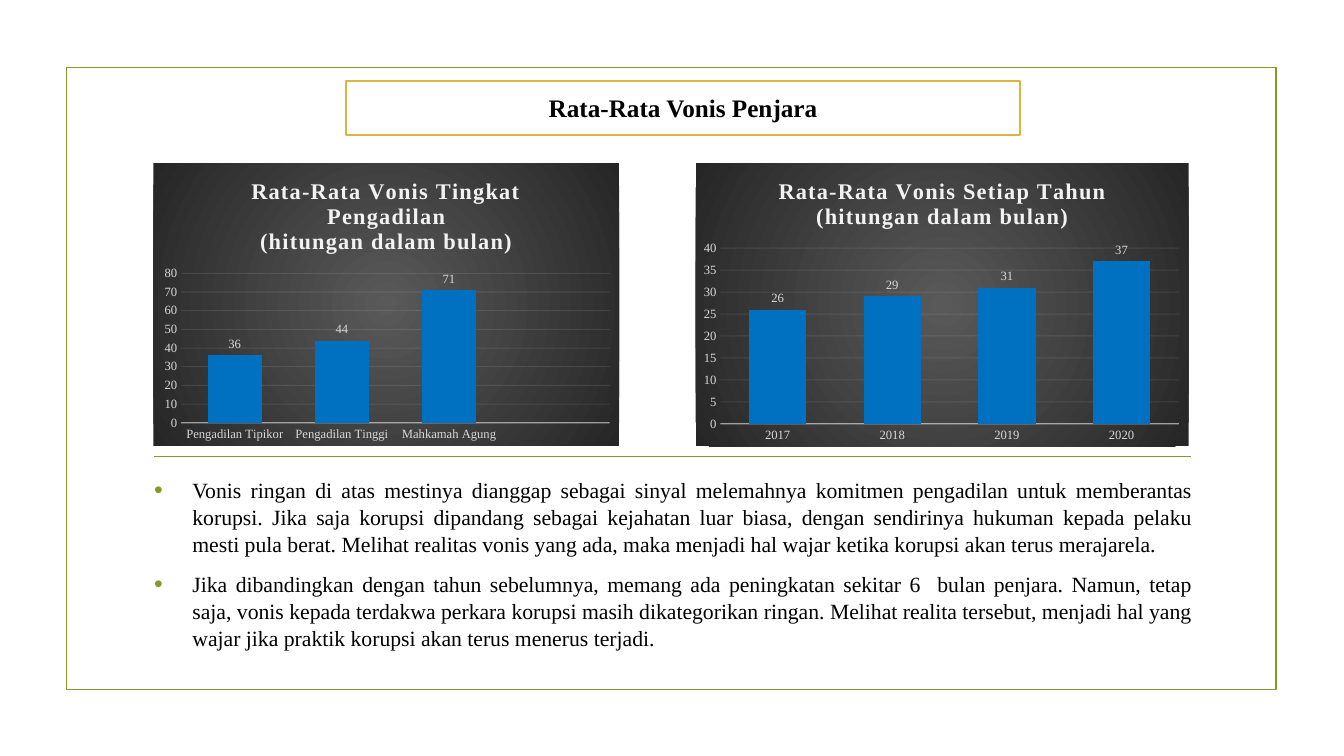
from dataclasses import dataclass

from lxml.etree import SubElement, _Element as Node
from pptx import Presentation
from pptx.chart.axis import _BaseAxis as Axis
from pptx.chart.chart import Chart
from pptx.chart.data import CategoryChartData as Data
from pptx.dml.color import RGBColor
from pptx.enum.chart import XL_CHART_TYPE as Kind, XL_LABEL_POSITION as Spot, XL_TICK_MARK as Tick
from pptx.enum.shapes import MSO_CONNECTOR as Link, MSO_SHAPE as Form
from pptx.enum.text import MSO_ANCHOR as Anchor, PP_ALIGN as Align
from pptx.oxml import parse_xml
from pptx.oxml.ns import nsdecls, qn
from pptx.slide import Slide
from pptx.text.text import Font, TextFrame, _Paragraph as Para
from pptx.util import Inches, Pt

FACE = "Times New Roman"
GREEN = RGBColor(0x83, 0x99, 0x2A)
GOLD = RGBColor(0xDE, 0xB3, 0x40)
BLUE = RGBColor(0x00, 0x70, 0xC0)
BLACK = RGBColor(0x00, 0x00, 0x00)
WHITE = RGBColor(0xFF, 0xFF, 0xFF)
PALE = RGBColor(0xF2, 0xF2, 0xF2)
GREY = RGBColor(0xD9, 0xD9, 0xD9)
DUSK = RGBColor(0x59, 0x59, 0x59)
NIGHT = RGBColor(0x26, 0x26, 0x26)


@dataclass(frozen=True)
class Box:
    left: float
    top: float
    width: float
    height: float

    def inches(self) -> tuple[Inches, ...]:
        return tuple(Inches(n) for n in (self.left, self.top, self.width, self.height))


@dataclass(frozen=True)
class Graph:
    title: str
    names: tuple[str, ...]
    values: tuple[int | None, ...]
    step: int
    box: Box
    plot: Box


UNIT = "(hitungan dalam bulan)"
GRAPHS = (
    Graph("Rata-Rata Vonis Tingkat Pengadilan",
          ("Pengadilan Tipikor", "Pengadilan Tinggi", "Mahkamah Agung", ""),
          (36, 44, 71, None), 10,
          Box(1.52, 1.62, 4.62, 2.8), Box(0.06, 0.39, 0.92, 0.53)),
    Graph("Rata-Rata Vonis Setiap Tahun",
          ("2017", "2018", "2019", "2020"), (26, 29, 31, 37), 5,
          Box(6.9, 1.62, 4.89, 2.81), Box(0.05, 0.3, 0.93, 0.62)),
)
POINTS = (
    "Vonis ringan di atas mestinya dianggap sebagai sinyal melemahnya komitmen "
    "pengadilan untuk memberantas korupsi. Jika saja korupsi dipandang sebagai "
    "kejahatan luar biasa, dengan sendirinya hukuman kepada pelaku mesti pula berat. "
    "Melihat realitas vonis yang ada, maka menjadi hal wajar ketika korupsi akan "
    "terus merajarela.",
    "Jika dibandingkan dengan tahun sebelumnya, memang ada peningkatan sekitar "
    "6  bulan penjara. Namun, tetap saja, vonis kepada terdakwa perkara korupsi masih "
    "dikategorikan ringan. Melihat realita tersebut, menjadi hal yang wajar jika "
    "praktik korupsi akan terus menerus terjadi.",
)


def style(font: Font, size: float, color: RGBColor, bold: bool = False) -> None:
    font.name, font.size, font.bold = FACE, Pt(size), bold
    font.color.rgb = color


def write(para: Para, text: str, size: float, color: RGBColor, bold: bool = False) -> Font:
    run = para.add_run()
    run.text = text
    style(run.font, size, color, bold)
    return run.font


def fade(node: Node, share: int) -> None:
    color = next(node.iter(qn("a:srgbClr")))
    SubElement(color, qn("a:alpha"), val=str(share * 1000))


def shade(chart: Chart) -> None:
    space = chart.element
    for old in space.findall(qn("c:spPr")):
        space.remove(old)
    space.find(qn("c:chart")).addnext(parse_xml(
        f'<c:spPr {nsdecls("c", "a")}><a:gradFill><a:gsLst>'
        f'<a:gs pos="0"><a:srgbClr val="{DUSK}"/></a:gs>'
        f'<a:gs pos="100000"><a:srgbClr val="{NIGHT}"/></a:gs></a:gsLst>'
        '<a:path path="circle"><a:fillToRect l="50000" t="50000" r="50000" b="50000"/>'
        '</a:path></a:gradFill><a:ln><a:noFill/></a:ln></c:spPr>'))


def place(chart: Chart, plot: Box) -> None:
    area = next(chart.element.iter(qn("c:plotArea")))
    for old in area.findall(qn("c:layout")):
        area.remove(old)
    area.insert(0, parse_xml(
        f'<c:layout {nsdecls("c")}><c:manualLayout><c:layoutTarget val="inner"/>'
        '<c:xMode val="edge"/><c:yMode val="edge"/>'
        f'<c:x val="{plot.left}"/><c:y val="{plot.top}"/>'
        f'<c:w val="{plot.width}"/><c:h val="{plot.height}"/>'
        '</c:manualLayout></c:layout>'))


def set_axis(axis: Axis) -> None:
    axis.major_tick_mark = axis.minor_tick_mark = Tick.NONE
    style(axis.tick_labels.font, 9, GREY)


def head(frame: TextFrame, title: str) -> None:
    for para, text in ((frame.paragraphs[0], title), (frame.add_paragraph(), UNIT)):
        font = write(para, text, 16, PALE, True)
        font._element.set("spc", "100")


def add_graph(slide: Slide, graph: Graph) -> None:
    data = Data()
    data.categories = graph.names
    data.add_series("Series 1", graph.values)
    chart = slide.shapes.add_chart(Kind.COLUMN_CLUSTERED, *graph.box.inches(), data).chart
    style(chart.font, 10, BLACK)
    chart.has_legend = False
    head(chart.chart_title.text_frame, graph.title)
    chart.chart_title.include_in_layout = False
    shade(chart)
    place(chart, graph.plot)

    base, scale = chart.category_axis, chart.value_axis
    set_axis(base)
    base.format.line.color.rgb = PALE
    base.format.line.width = Pt(1)
    fade(base._element.find(qn("c:spPr")), 54)
    set_axis(scale)
    scale.minimum_scale, scale.maximum_scale = 0, graph.step * 8
    scale.major_unit = graph.step
    scale.format.line.fill.background()
    grid = scale.major_gridlines.format.line
    grid.color.rgb, grid.width = PALE, Pt(0.75)
    fade(scale._element.find(qn("c:majorGridlines")), 10)

    bars = chart.plots[0]
    bars.gap_width, bars.overlap, bars.vary_by_categories = 100, -24, False
    fill = bars.series[0].format.fill
    fill.solid()
    fill.fore_color.rgb = BLUE
    bars.has_data_labels = True
    bars.data_labels.show_value = True
    bars.data_labels.position = Spot.OUTSIDE_END
    style(bars.data_labels.font, 9, GREY)


def add_frame(slide: Slide) -> None:
    frame = slide.shapes.add_shape(Form.RECTANGLE, *Box(0.66, 0.67, 12, 6.17).inches())
    frame.shadow.inherit = False
    frame.fill.background()
    frame.line.color.rgb, frame.line.width = GREEN, Pt(1.25)
    rule = slide.shapes.add_connector(
        Link.STRAIGHT, Inches(1.53), Inches(4.53), Inches(11.81), Inches(4.53))
    rule.line.color.rgb, rule.line.width = GREEN, Pt(1.25)
    SubElement(rule._element.spPr, qn("a:effectLst"))


def set_title(slide: Slide) -> None:
    title = slide.shapes.title
    title.left, title.top, title.width, title.height = Box(3.43, 0.8, 6.69, 0.54).inches()
    title.fill.solid()
    title.fill.fore_color.rgb = WHITE
    title.line.color.rgb, title.line.width = GOLD, Pt(1.25)
    title.text_frame.vertical_anchor = Anchor.MIDDLE
    para = title.text_frame.paragraphs[0]
    para.alignment = Align.CENTER
    write(para, "Rata-Rata Vonis Penjara", 18, BLACK, True)


def add_points(slide: Slide) -> None:
    frame = slide.shapes.add_textbox(*Box(1.43, 4.75, 10.49, 1.68).inches()).text_frame
    frame.word_wrap, frame.vertical_anchor = True, Anchor.MIDDLE
    for rank, text in enumerate(POINTS):
        para = frame.add_paragraph() if rank else frame.paragraphs[0]
        para.alignment, para.line_spacing = Align.JUSTIFY, 1.04
        para.space_before, para.space_after = Pt(3 if rank else 0), Pt(6)
        props = para._p.get_or_add_pPr()
        props.set("marL", str(Inches(0.38)))
        props.set("indent", str(-Inches(0.38)))
        SubElement(SubElement(props, qn("a:buClr")), qn("a:srgbClr"), val=str(GREEN))
        SubElement(props, qn("a:buSzPct"), val="115000")
        SubElement(props, qn("a:buFont"), typeface="Arial")
        SubElement(props, qn("a:buChar"), char="•")
        write(para, text, 15.5, BLACK)


def main() -> None:
    """Build the slide on average prison sentences."""
    deck = Presentation()
    deck.slide_width, deck.slide_height = Inches(13.33), Inches(7.5)
    slide = deck.slides.add_slide(deck.slide_layouts[5])
    add_frame(slide)
    set_title(slide)
    for graph in GRAPHS:
        add_graph(slide, graph)
    add_points(slide)
    deck.save("out.pptx")


if __name__ == "__main__":
    main()
